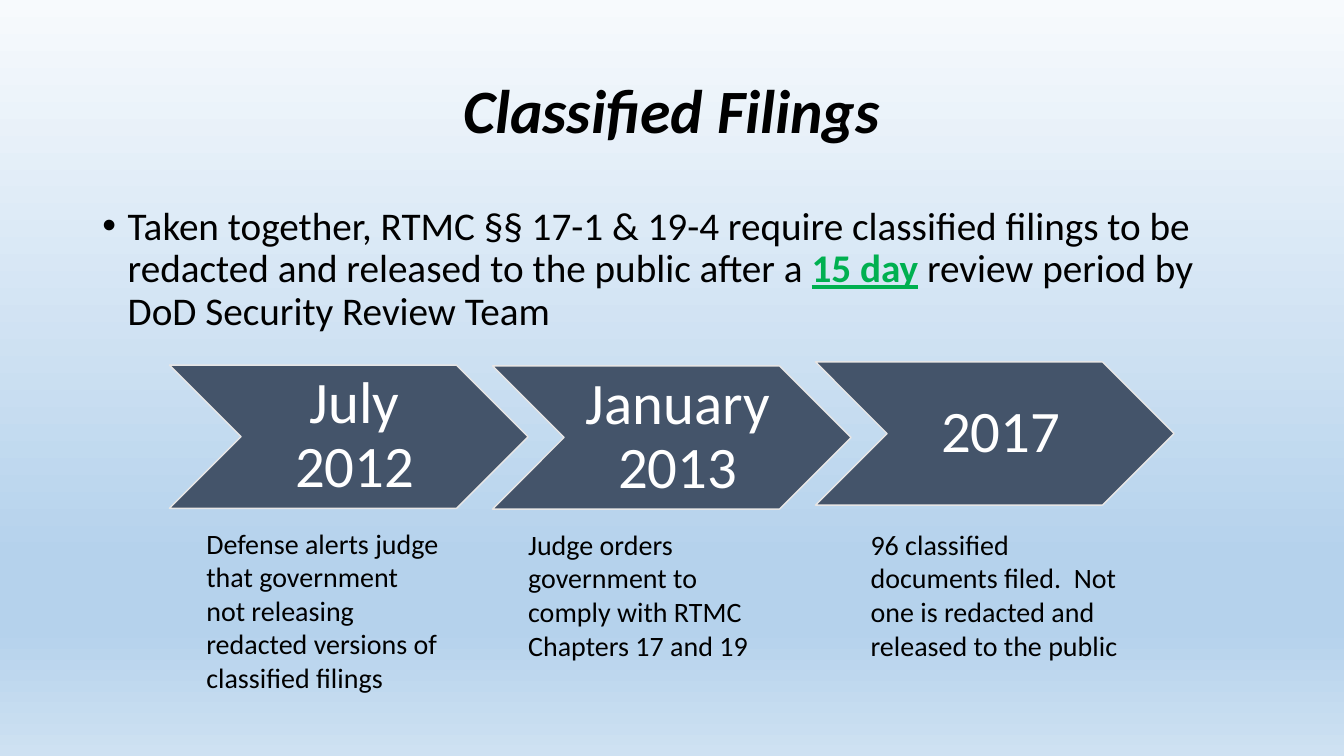
from lxml import etree
from pptx import Presentation
from pptx import util as u
from pptx.dml import color
from pptx.enum import shapes, text
from pptx.oxml import ns

BLACK, WHITE, GREEN, SLATE, PALE = "000000", "FFFFFF", "00B050", "44546A", "E7E6E6"
SKY = [(0, "F7FAFD"), (74, "B5D2EC"), (83, "B5D2EC"), (100, "CEE1F2")]


def rgb(value):
    return color.RGBColor.from_string(value)


def apply(target, values):
    for name, value in values.items():
        setattr(target, name, value)


class SlideBuilder:
    font_name = "Calibri"

    def __init__(self, slide):
        self.slide = slide

    def background(self, stops):
        fill = self.slide.background.fill
        fill.gradient()
        fill.gradient_angle = 270
        stop_list = next(self.slide.element.iter(ns.qn("a:gsLst")))
        for stop in list(stop_list):
            stop_list.remove(stop)
        for percent, value in stops:
            stop = etree.SubElement(stop_list, ns.qn("a:gs"), pos=str(percent * 1000))
            etree.SubElement(stop, ns.qn("a:srgbClr"), val=value)

    def add_text(self, shape, runs, size, ink=BLACK, frame=None, layout=None):
        """Fill a shape with one paragraph made of (wording, font format) runs."""
        apply(shape.text_frame, {"word_wrap": True, **(frame or {})})
        paragraph = shape.text_frame.paragraphs[0]
        apply(paragraph, layout or {})
        for wording, style in runs:
            run = paragraph.add_run()
            run.text = wording
            style = dict(style)
            run.font.color.rgb = rgb(style.pop("ink", ink))
            apply(run.font, {"name": self.font_name, "size": u.Pt(size), **style})
        return paragraph

    def text_box(self, place, runs, size, **formats):
        shape = self.slide.shapes.add_textbox(*map(u.Cm, place))
        return self.add_text(shape, runs, size, **formats)

    def bullet(self, paragraph, indent):
        properties = paragraph._p.get_or_add_pPr()
        properties.set("marL", str(u.Cm(indent)))
        properties.set("indent", str(-u.Cm(indent)))
        etree.SubElement(properties, ns.qn("a:buFont"), typeface="Arial")
        etree.SubElement(properties, ns.qn("a:buChar"), char="•")

    def chevron(self, place, wording):
        shape = self.slide.shapes.add_shape(shapes.MSO_SHAPE.CHEVRON, *map(u.Cm, place))
        shape.shadow.inherit = False
        shape.fill.solid()
        shape.fill.fore_color.rgb = rgb(SLATE)
        shape.line.color.rgb = rgb(PALE)
        shape.line.width = u.Pt(1)
        margin = u.Cm(0.15)
        frame = {"vertical_anchor": text.MSO_ANCHOR.MIDDLE, "margin_left": u.Cm(0.45),
                 "margin_top": margin, "margin_right": margin, "margin_bottom": margin}
        self.add_text(shape, [(wording, {})], 42, ink=WHITE, frame=frame,
                      layout={"alignment": text.PP_ALIGN.CENTER, "line_spacing": 0.9})


def main():
    presentation = Presentation()
    apply(presentation, {"slide_width": u.Cm(33.87), "slide_height": u.Cm(19.05)})
    builder = SlideBuilder(presentation.slides.add_slide(presentation.slide_layouts[6]))
    builder.background(SKY)

    # Title
    builder.text_box((2.33, 1.02, 29.21, 3.68),
                     [("Classified Filings", {"bold": True, "italic": True})], 44,
                     frame={"vertical_anchor": text.MSO_ANCHOR.MIDDLE},
                     layout={"alignment": text.PP_ALIGN.CENTER, "line_spacing": 0.9})

    # Rule being explained
    rule = builder.text_box(
        (2.33, 5.08, 29.21, 12.09),
        [("Taken together, RTMC §§ 17-1 & 19-4 require classified filings to be "
          "redacted and released to the public after a ", {}),
         ("15 day", {"ink": GREEN, "bold": True, "underline": True}),
         (" review period by DoD Security Review Team", {})],
        28, layout={"line_spacing": 0.9, "space_before": u.Pt(10)})
    builder.bullet(rule, 0.64)

    # Timeline: date, chevron top, caption place, caption
    timeline = [
        ("July 2012", 9.2, (4.95, 13.13, 6.38, 4.52),
         "Defense alerts judge that government not releasing redacted versions "
         "of classified filings"),
        ("January 2013", 9.22, (13.06, 13.16, 6.5, 3.68),
         "Judge orders government to comply with RTMC Chapters 17 and 19"),
        ("2017", 9.12, (21.69, 13.16, 6.99, 3.68),
         "96 classified documents filed.  Not one is redacted and released to the public"),
    ]
    for index, (date, top, place, caption) in enumerate(timeline):
        builder.chevron((4.27 + 8.14 * index, top, 9.04, 3.61), date)
        builder.text_box(place, [(caption, {})], 20,
                         frame={"auto_size": text.MSO_AUTO_SIZE.SHAPE_TO_FIT_TEXT})

    presentation.save("out.pptx")


if __name__ == "__main__":
    main()
